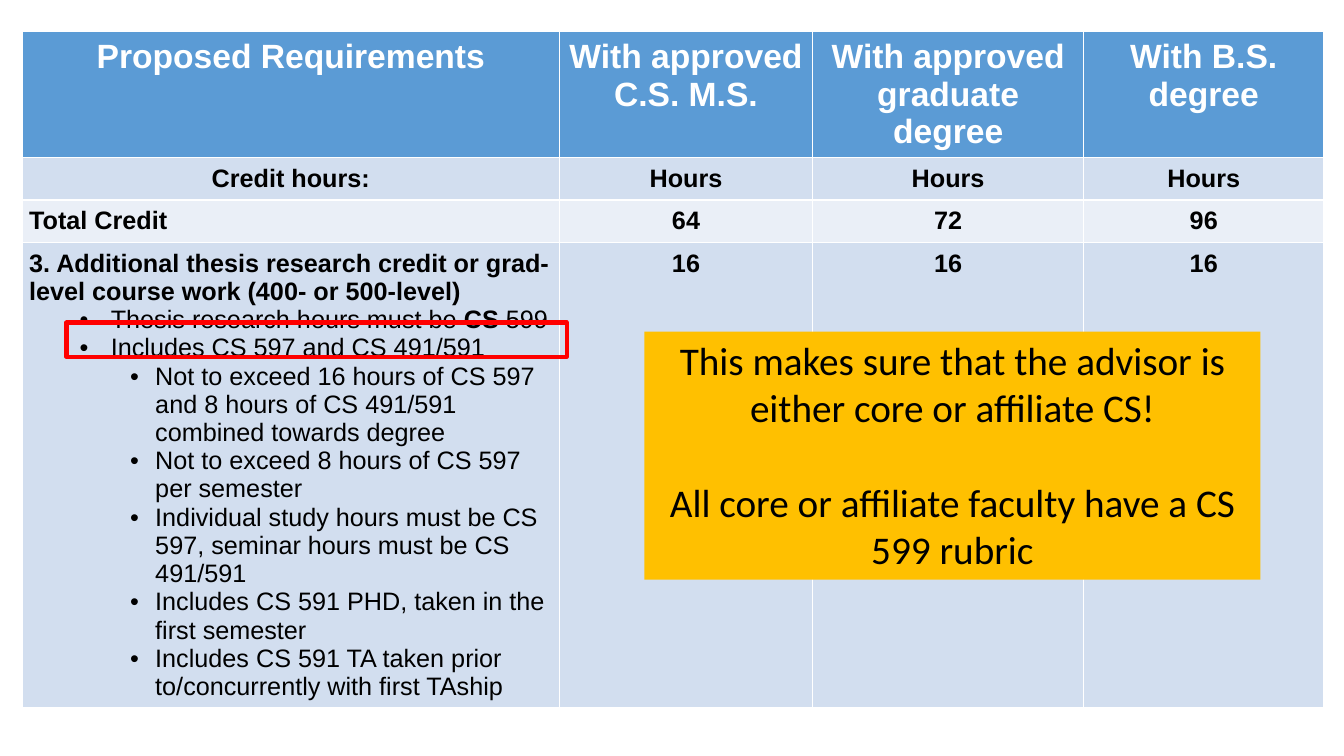
from lxml.etree import SubElement
from pptx import Presentation
from pptx.dml.color import RGBColor
from pptx.enum.shapes import MSO_SHAPE
from pptx.enum.text import MSO_ANCHOR, PP_ALIGN
from pptx.oxml.ns import qn
from pptx.util import Inches, Pt

COLORS = {
    "header": "5B9BD5", "band": "D2DEEF", "light": "EAEFF7",
    "white": "FFFFFF", "black": "000000", "red": "FF0000", "amber": "FFC000",
}
SLIDE_WIDTH, SLIDE_HEIGHT = Inches(13.33), Inches(7.5)

REQUIREMENTS_BOX = (1.65, 4.13, 96.85, 89.35)
HIGHLIGHT_BOX = (4.95, 42.67, 37.21, 4.53)
NOTE_BOX = (47.94, 43.87, 45.84, 32.8)
COLUMN_SHARES = (41.28, 19.44, 20.84, 18.44)
ROW_SHARES = (18.65, 6.2, 6.2, 68.95)
ROW_FILLS = ("header", "band", "light", "band")

HOURS = [
    ["Proposed Requirements", "With approved C.S. M.S.",
     "With approved graduate degree", "With B.S. degree"],
    ["Credit hours:", "Hours", "Hours", "Hours"],
    ["Total Credit", "64", "72", "96"],
    ["3. Additional thesis research credit or grad-level course work (400- or 500-level)",
     "16", "16", "16"],
]
RULES = [
    (1, [("Thesis research hours must be ", False), ("CS", True), (" 599", False)]),
    (1, [("Includes CS 597 and CS 491/591", False)]),
    (2, [("Not to exceed 16 hours of CS 597 and 8 hours of CS 491/591 "
          "combined towards degree", False)]),
    (2, [("Not to exceed 8 hours of CS 597 per semester", False)]),
    (2, [("Individual study hours must be CS 597, seminar hours must be CS 491/591", False)]),
    (2, [("Includes CS 591 PHD, taken in the first semester", False)]),
    (2, [("Includes CS 591 TA taken prior to/concurrently with first TAship", False)]),
]
BULLET_INDENTS = {1: (0.81, -0.31), 2: (1.25, -0.25)}
NOTE = [
    "This makes sure that the advisor is either core or affiliate CS!",
    "All core or affiliate faculty have a CS 599 rubric",
]


def color(name):
    return RGBColor.from_string(COLORS[name])


def place(box):
    sizes = (SLIDE_WIDTH, SLIDE_HEIGHT) * 2
    return [int(size * share / 100) for size, share in zip(sizes, box)]


def add_run(paragraph, wording, size, ink="black", bold=False, face="Arial"):
    run = paragraph.add_run()
    run.text = wording
    run.font.size, run.font.name, run.font.bold = Pt(size), face, bold
    run.font.color.rgb = color(ink)


def add_bullet(paragraph, level):
    paragraph.level = level
    margin, hanging = BULLET_INDENTS[level]
    properties = paragraph._p.get_or_add_pPr()
    properties.set("marL", str(Inches(margin)))
    properties.set("indent", str(Inches(hanging)))
    SubElement(properties, qn("a:buFont")).set("typeface", "Arial")
    SubElement(properties, qn("a:buChar")).set("char", "•")


def add_requirements(slide, box):
    left, top, width, height = place(box)
    table = slide.shapes.add_table(len(HOURS), len(HOURS[0]), left, top, width, height).table
    for column, share in zip(table.columns, COLUMN_SHARES):
        column.width = int(width * share / 100)
    for row, share in zip(table.rows, ROW_SHARES):
        row.height = int(height * share / 100)
    for r, wordings in enumerate(HOURS):
        for c, wording in enumerate(wordings):
            cell = table.cell(r, c)
            cell.margin_left = cell.margin_right = Inches(0.07)
            cell.margin_top = cell.margin_bottom = Inches(0.07)
            cell.fill.solid()
            cell.fill.fore_color.rgb = color(ROW_FILLS[r])
            paragraph = cell.text_frame.paragraphs[0]
            paragraph.alignment = PP_ALIGN.LEFT if c == 0 and r > 1 else PP_ALIGN.CENTER
            size, ink = (24, "white") if r == 0 else (18, "black")
            add_run(paragraph, wording, size, ink, True)
    add_rules(table.cell(len(HOURS) - 1, 0).text_frame)


def add_rules(frame):
    for level, pieces in RULES:
        paragraph = frame.add_paragraph()
        add_bullet(paragraph, level)
        for wording, bold in pieces:
            add_run(paragraph, wording, 18, bold=bold)


def add_highlight(slide, box):
    highlight = slide.shapes.add_shape(MSO_SHAPE.RECTANGLE, *place(box))
    highlight.shadow.inherit = False
    highlight.fill.background()
    highlight.line.color.rgb = color("red")
    highlight.line.width = Pt(3)


def add_note(slide, box):
    note = slide.shapes.add_textbox(*place(box))
    note.fill.solid()
    note.fill.fore_color.rgb = color("amber")
    frame = note.text_frame
    frame.word_wrap = True
    frame.vertical_anchor = MSO_ANCHOR.TOP
    for i, wording in enumerate(NOTE):
        paragraph = frame.add_paragraph() if i else frame.paragraphs[0]
        paragraph.alignment = PP_ALIGN.CENTER
        paragraph.space_before = Pt(34 * i)
        add_run(paragraph, wording, 28, face="Calibri")


def main():
    deck = Presentation()
    deck.slide_width, deck.slide_height = SLIDE_WIDTH, SLIDE_HEIGHT
    slide = deck.slides.add_slide(deck.slide_layouts[6])
    add_requirements(slide, REQUIREMENTS_BOX)
    add_highlight(slide, HIGHLIGHT_BOX)
    add_note(slide, NOTE_BOX)
    deck.save("out.pptx")


if __name__ == "__main__":
    main()
